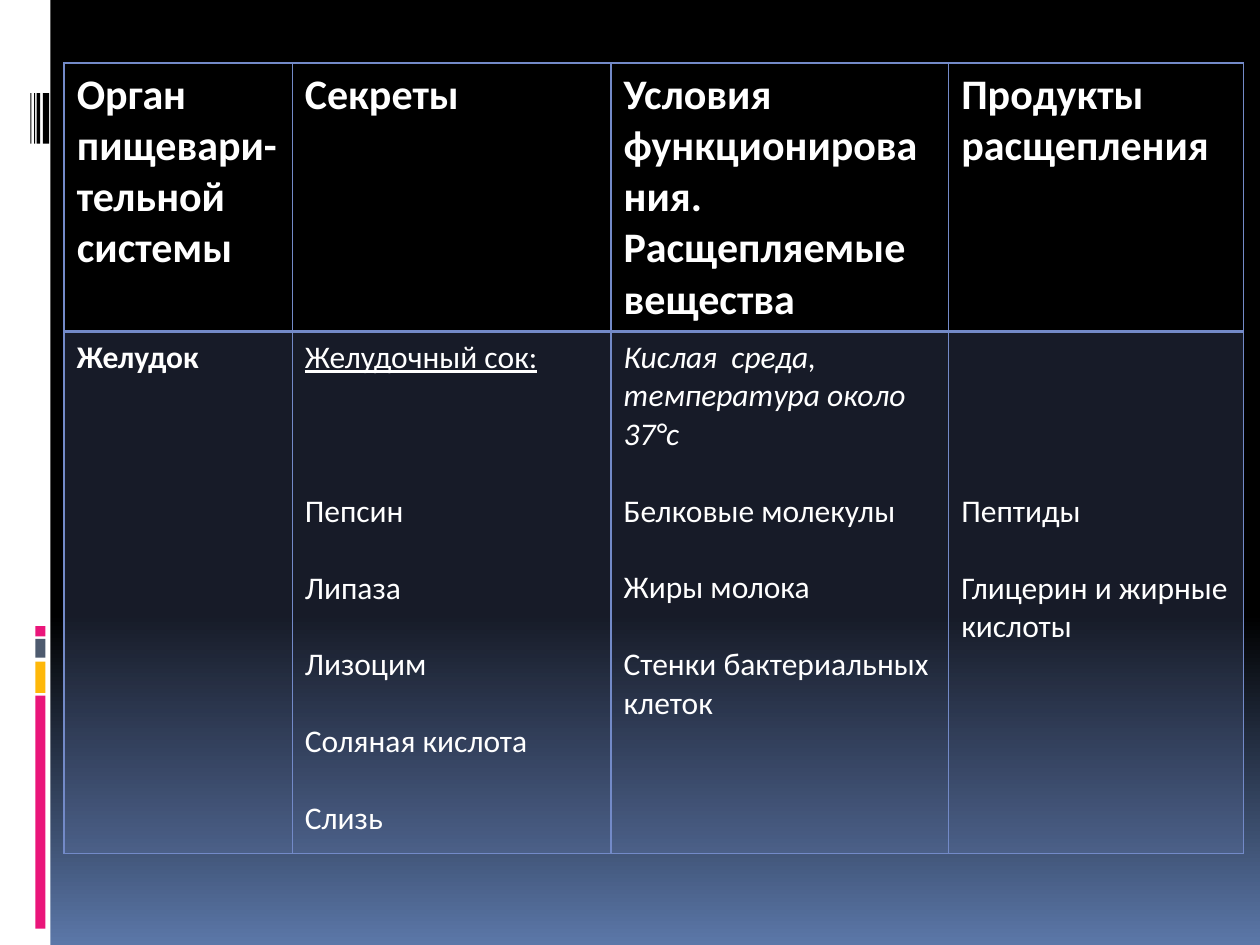
from copy import deepcopy
from dataclasses import dataclass

from lxml import etree
from pptx import Presentation
from pptx.dml.color import RGBColor
from pptx.enum.shapes import MSO_SHAPE as Shape
from pptx.oxml.ns import qn
from pptx.util import Inches, Pt

COLORS = {
    "black": "000000",
    "white": "FFFFFF",
    "sky": "5B77A8",
    "pink": "EA157A",
    "amber": "FEB80A",
    "slate": "4E5B6F",
    "grid": "738AC8",
}
NO_STYLE = "{2D5ABB26-0587-4C30-8999-92F81FD0307C}"
LINE = 22  # height of one body line, in points
MARGIN = 0.05  # top margin of a cell, in inches


@dataclass
class Bar:
    left: float
    top: float
    width: float
    height: float
    color: str


@dataclass
class Line:
    text: str
    lines_before: int = 0
    bold: bool = False
    italic: bool = False
    underline: bool = False


BARS = [
    Bar(0, 0, 0.4, 7.5, "white"),
    *(Bar(0.28, top, 0.08, height, color) for top, height, color in (
        (5.52, 1.85, "pink"), (5.25, 0.25, "amber"),
        (5.07, 0.15, "slate"), (4.97, 0.08, "pink"))),
    *(Bar(left, 0.74, width, 0.4, "black") for left, width in (
        (0.34, 0.05), (0.29, 0.03), (0.27, 0.01), (0.24, 0.01))),
]
COLUMN_WIDTHS = [1.81, 2.53, 2.68, 2.34]
ROW_HEIGHTS = [2.13, 4.14]
HEADER = [
    ["Орган пищевари-", "тельной системы"],
    ["Секреты"],
    ["Условия функционирования. Расщепляемые вещества"],
    ["Продукты расщепления"],
]
STOMACH = [
    [Line("Желудок", bold=True)],
    [Line("Желудочный сок:", underline=True), Line("Пепсин", 3),
     Line("Липаза", 1), Line("Лизоцим", 1), Line("Соляная кислота", 1),
     Line("Слизь", 1)],
    [Line("Кислая  среда, температура около 37°с", italic=True),
     Line("Белковые молекулы", 1), Line("Жиры молока", 1),
     Line("Стенки бактериальных клеток", 1)],
    [Line("Пептиды", 4), Line("Глицерин и жирные кислоты", 1)],
]


def rgb(name: str) -> RGBColor:
    return RGBColor.from_string(COLORS[name])


def paint_background(slide) -> None:
    """Black down to 65 %, then fading to blue at the bottom."""
    fill = slide.background.fill
    fill.gradient()
    fill.gradient_angle = 270
    first, last = fill.gradient_stops
    first.color.rgb, first.position = rgb("black"), 0
    last.color.rgb, last.position = rgb("sky"), 1
    start = slide.background._cSld.find(".//" + qn("a:gs"))
    middle = deepcopy(start)
    middle.set("pos", "65000")
    start.addnext(middle)


def draw_bar(slide, bar: Bar) -> None:
    shape = slide.shapes.add_shape(
        Shape.RECTANGLE, Inches(bar.left), Inches(bar.top),
        Inches(bar.width), Inches(bar.height))
    shape.shadow.inherit = False
    shape.fill.solid()
    shape.fill.fore_color.rgb = rgb(bar.color)
    shape.line.fill.background()


def set_borders(cell, top: float, bottom: float) -> None:
    """Draw all four sides; the vertical ones are 1 pt wide."""
    properties = cell._tc.get_or_add_tcPr()
    sides = {"lnL": 1, "lnR": 1, "lnT": top, "lnB": bottom}
    for position, (side, width) in enumerate(sides.items()):
        border = etree.Element(qn(f"a:{side}"), w=str(Pt(width)))
        solid = etree.SubElement(border, qn("a:solidFill"))
        etree.SubElement(solid, qn("a:srgbClr"), val=COLORS["grid"])
        properties.insert(position, border)


def tint(cell, percent: int) -> None:
    cell.fill.solid()
    cell.fill.fore_color.rgb = rgb("grid")
    color = cell._tc.tcPr.find(".//" + qn("a:srgbClr"))
    etree.SubElement(color, qn("a:alpha"), val=str(percent * 1000))


def write_cell(cell, lines: list[Line], size: int) -> None:
    """Gaps above a cell's first line become its top margin."""
    cell.margin_top = Inches(MARGIN) + Pt(LINE * lines[0].lines_before)
    frame = cell.text_frame
    for index, line in enumerate(lines):
        paragraph = frame.add_paragraph() if index else frame.paragraphs[0]
        paragraph.text = line.text
        if index and line.lines_before:
            paragraph.space_before = Pt(LINE * line.lines_before)
        font = paragraph.font
        font.name, font.size = "Calibri", Pt(size)
        font.color.rgb = rgb("white")
        font.bold, font.italic = line.bold, line.italic
        font.underline = line.underline


def draw_table(slide) -> None:
    table = slide.shapes.add_table(
        len(ROW_HEIGHTS), len(COLUMN_WIDTHS), Inches(0.51), Inches(0.5),
        Inches(sum(COLUMN_WIDTHS)), Inches(sum(ROW_HEIGHTS))).table
    table.first_row = table.horz_banding = False
    table._tbl.tblPr.find(qn("a:tableStyleId")).text = NO_STYLE
    for column, width in zip(table.columns, COLUMN_WIDTHS):
        column.width = Inches(width)
    for row, height in zip(table.rows, ROW_HEIGHTS):
        row.height = Inches(height)
    for index, (titles, lines) in enumerate(zip(HEADER, STOMACH)):
        head, body = table.cell(0, index), table.cell(1, index)
        write_cell(head, [Line(title, bold=True) for title in titles], 24)
        head.fill.background()
        set_borders(head, top=1, bottom=2)
        write_cell(body, lines, 18)
        tint(body, 20)
        set_borders(body, top=2, bottom=1)


def main() -> None:
    deck = Presentation()
    deck.slide_width, deck.slide_height = Inches(10), Inches(7.5)
    slide = deck.slides.add_slide(deck.slide_layouts[6])
    paint_background(slide)
    for bar in BARS:
        draw_bar(slide, bar)
    draw_table(slide)
    deck.save("out.pptx")


if __name__ == "__main__":
    main()
